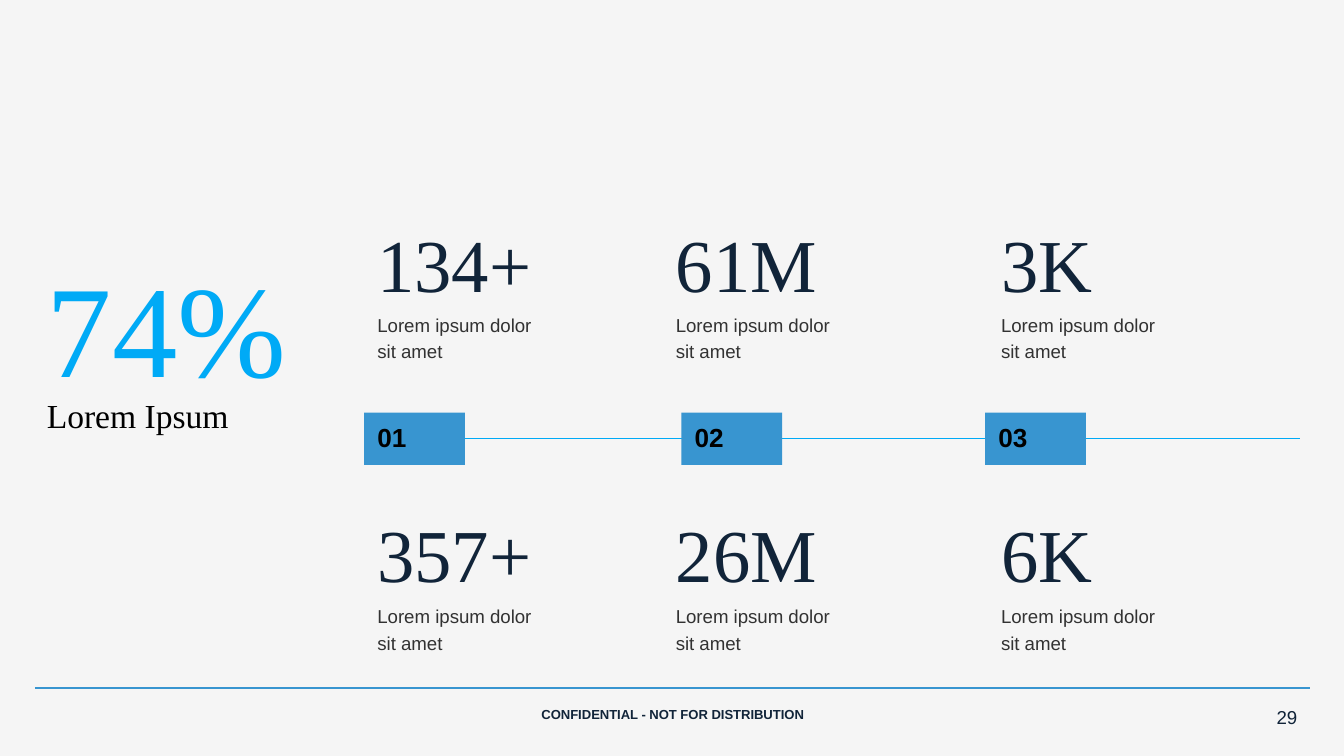
import pptx
import pptx.util
import pptx.dml.color
import pptx.enum.shapes
import pptx.enum.text
import lxml.etree

RGB = pptx.dml.color.RGBColor
ALIGN = pptx.enum.text.PP_ALIGN
ANCHOR = pptx.enum.text.MSO_ANCHOR
PAPER = RGB(0xF5, 0xF5, 0xF5)
NAVY = RGB(0x11, 0x24, 0x39)
SKY = RGB(0x00, 0xAA, 0xF6)
BLUE = RGB(0x38, 0x95, 0xD0)
GREY = RGB(0x32, 0x32, 0x32)
BLACK = RGB(0, 0, 0)
SANS, SERIF = "Arial", "Times New Roman"
PX = 4572  # 200 px to the inch

deck = pptx.Presentation()
deck.slide_width, deck.slide_height = 2000 * PX, 1125 * PX
slide = deck.slides.add_slide(deck.slide_layouts[6])
slide.background.fill.solid()
slide.background.fill.fore_color.rgb = PAPER


def write(shape, text, size, face, color, bold=False, align=ALIGN.LEFT,
          anchor=ANCHOR.TOP, space=1.0, inset=(20, 10)):
    """Put one formatted run into a shape; inset is (sides, top and bottom)."""
    frame = shape.text_frame
    frame.word_wrap = True
    frame.vertical_anchor = anchor
    frame.margin_left = frame.margin_right = inset[0] * PX
    frame.margin_top = frame.margin_bottom = inset[1] * PX
    para = frame.paragraphs[0]
    para.alignment = align
    para.line_spacing = space
    run = para.add_run()
    run.text = text
    run.font.size = pptx.util.Pt(size)
    run.font.name = face
    run.font.bold = bold
    run.font.color.rgb = color


def box(x, y, w, h):
    return slide.shapes.add_textbox(x * PX, y * PX, w * PX, h * PX)


# Footer
write(box(776, 1024, 450, 50), "CONFIDENTIAL - NOT FOR DISTRIBUTION", 7, SANS,
      NAVY, bold=True, align=ALIGN.CENTER, anchor=ANCHOR.BOTTOM, inset=(0, 0))
write(box(1852, 1024, 98, 86), "29", 10, SANS, NAVY, align=ALIGN.RIGHT,
      anchor=ANCHOR.MIDDLE, inset=(20, 20))

# Footer rule and timeline
for left, right, y, color in [(52, 1950, 1024, BLUE), (602, 1934, 653, SKY)]:
    line = slide.shapes.add_connector(
        pptx.enum.shapes.MSO_CONNECTOR.STRAIGHT,
        left * PX, y * PX, right * PX, y * PX)
    line.line.color.rgb = color
    line.line.width = pptx.util.Pt(0.75)
    props = line.line._get_or_add_ln().getparent()
    lxml.etree.SubElement(props, pptx.oxml.ns.qn("a:effectLst"))

# Headline figure
write(box(50, 358, 402, 256), "74%", 70, SERIF, SKY)
write(box(50, 578, 470, 80), "Lorem Ipsum", 18, SERIF, BLACK)

# One column per step: tag on the timeline, a figure above and one below
steps = [
    ("01", 542, 542, "134+", "357+"),
    ("02", 1014, 986, "61M", "26M"),
    ("03", 1466, 1470, "3K", "6K"),
]
for label, left, x, above, below in steps:
    tag = slide.shapes.add_shape(pptx.enum.shapes.MSO_SHAPE.RECTANGLE,
                                 left * PX, 614 * PX, 150 * PX, 78 * PX)
    tag.shadow.inherit = False
    tag.fill.solid()
    tag.fill.fore_color.rgb = BLUE
    tag.line.fill.background()
    write(tag, label, 14, SANS, BLACK, bold=True, anchor=ANCHOR.MIDDLE,
          space=0.9)
    for value, top, note in [(above, 314, 450), (below, 746, 884)]:
        write(box(x, top, 294, 154), value, 40, SERIF, NAVY)
        write(box(x, note, 294, 94), "Lorem ipsum dolor sit amet", 10, SANS,
              GREY, space=1.2)

deck.save("out.pptx")
